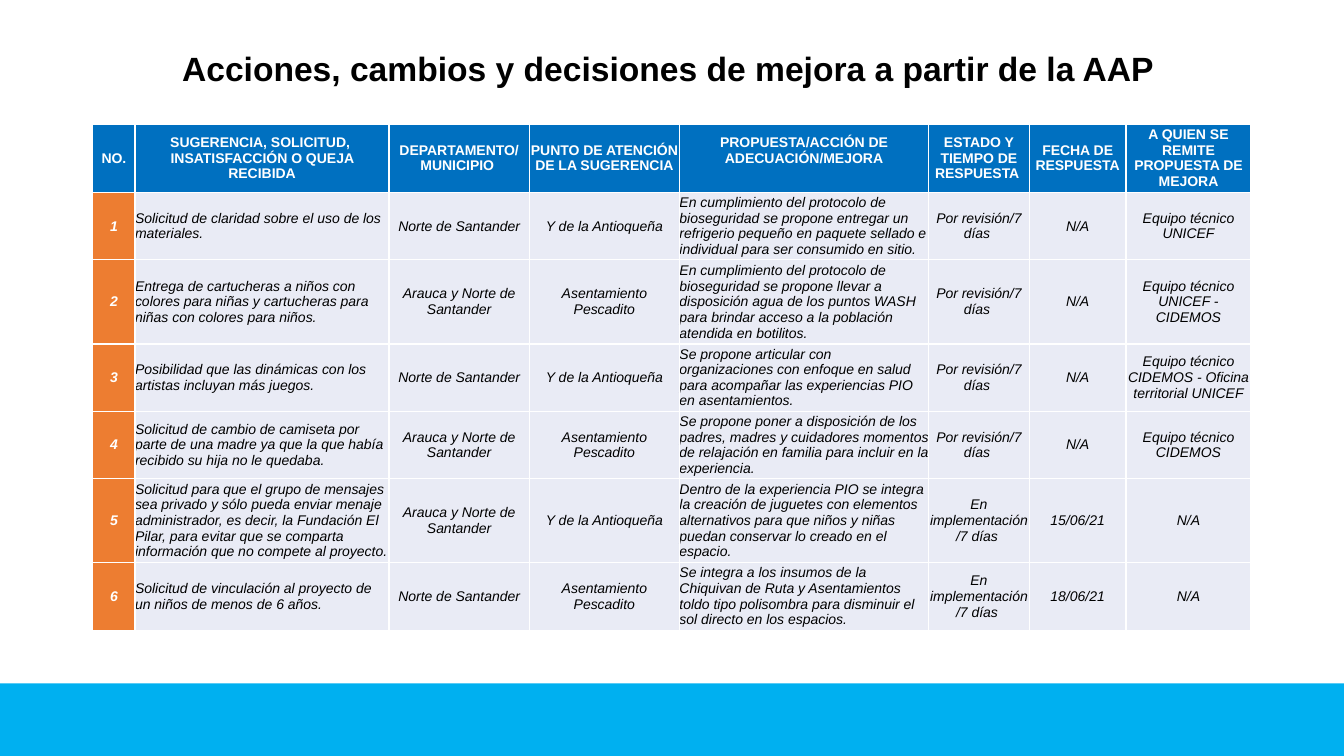
from lxml.etree import SubElement
from pptx import Presentation
from pptx.dml.color import RGBColor
from pptx.enum.shapes import MSO_SHAPE as Shape
from pptx.enum.text import MSO_ANCHOR as Anchor, PP_ALIGN as Align
from pptx.oxml.ns import qn
from pptx.util import Inches, Pt

HEADERS = [
    ["NO."],
    ["SUGERENCIA, SOLICITUD, ", "INSATISFACCIÓN O QUEJA RECIBIDA"],
    ["DEPARTAMENTO/", "MUNICIPIO "],
    ["PUNTO DE ATENCIÓN ", "DE LA SUGERENCIA"],
    ["PROPUESTA/ACCIÓN DE ADECUACIÓN/MEJORA"],
    ["ESTADO Y TIEMPO DE RESPUESTA "],
    ["FECHA DE RESPUESTA"],
    ["A QUIEN SE REMITE PROPUESTA DE MEJORA"],
]
NORTE, ARAUCA = "Norte de Santander", "Arauca y Norte de Santander"
ANTIOQUENA, PESCADITO = "Y de la Antioqueña", "Asentamiento Pescadito"
REVISION, IMPLEMENTACION = "Por revisión/7 días ", "En implementación/7 días "
ACTIONS = [
    ("Solicitud de claridad sobre el uso de los materiales.", NORTE, ANTIOQUENA,
     "En cumplimiento del protocolo de bioseguridad se propone entregar un refrigerio "
     "pequeño en paquete sellado e individual para ser consumido en sitio.",
     REVISION, "N/A", "Equipo técnico UNICEF"),
    ("Entrega de cartucheras a niños con colores para niñas y cartucheras para niñas "
     "con colores para niños.", ARAUCA, PESCADITO,
     "En cumplimiento del protocolo de bioseguridad se propone llevar a disposición agua "
     "de los puntos WASH para brindar acceso a la población atendida en botilitos.",
     REVISION, "N/A", "Equipo técnico UNICEF - CIDEMOS"),
    ("Posibilidad que las dinámicas con los artistas incluyan más juegos.", NORTE, ANTIOQUENA,
     "Se propone articular con organizaciones con enfoque en salud para acompañar las "
     "experiencias PIO en asentamientos.",
     REVISION, "N/A", "Equipo técnico CIDEMOS - Oficina territorial UNICEF"),
    ("Solicitud de cambio de camiseta por parte de una madre ya que la que había recibido "
     "su hija no le quedaba.", ARAUCA, PESCADITO,
     "Se propone poner a disposición de los padres, madres y cuidadores momentos de "
     "relajación en familia para incluir en la experiencia.",
     REVISION, "N/A", "Equipo técnico CIDEMOS"),
    ("Solicitud para que el grupo de mensajes sea privado y sólo pueda enviar menaje "
     "administrador, es decir, la Fundación El Pilar, para evitar que se comparta "
     "información que no compete al proyecto.", ARAUCA, ANTIOQUENA,
     "Dentro de la experiencia PIO se integra la creación de juguetes con elementos "
     "alternativos para que niños y niñas puedan conservar lo creado en el espacio.",
     IMPLEMENTACION, "15/06/21", "N/A"),
    ("Solicitud de vinculación al proyecto de un niños de menos de 6 años.", NORTE, PESCADITO,
     "Se integra a los insumos de la Chiquivan de Ruta y Asentamientos toldo tipo "
     "polisombra para disminuir el sol directo en los espacios.",
     IMPLEMENTACION, "18/06/21", "N/A"),
]
COLUMN_WIDTHS = [3.15, 18.9, 10.43, 11.18, 18.53, 7.5, 7.2, 9.3]
ROW_HEIGHTS = [9.07, 7.87, 9.73, 5.87, 7.87, 9.73, 7.87]
LONG_TEXT_COLUMNS = (1, 4)
PROPOSAL_COLUMN = 4


def color(value):
    return RGBColor.from_string(value)


class SlideBuilder:
    """Draw styled elements on a slide divided into 100 columns and 100 rows."""

    font = "Arial"
    black, white = "000000", "FFFFFF"
    band_blue, header_blue = "00B0F0", "0070C0"
    orange, pale = "ED7D31", "E9EBF5"

    def __init__(self, presentation):
        self.column = presentation.slide_width / 100
        self.row = presentation.slide_height / 100
        self.slide = presentation.slides.add_slide(presentation.slide_layouts[6])

    def place(self, left, top, width, height):
        return (round(left * self.column), round(top * self.row),
                round(width * self.column), round(height * self.row))

    def band(self, *area):
        shape = self.slide.shapes.add_shape(Shape.RECTANGLE, *self.place(*area))
        shape.shadow.inherit = False
        shape.fill.solid()
        shape.fill.fore_color.rgb = color(self.band_blue)
        shape.line.fill.background()

    def add_lines(self, frame, lines, size, ink, align=Align.CENTER, bold=False, italic=False):
        for index, line in enumerate(lines):
            paragraph = frame.add_paragraph() if index else frame.paragraphs[0]
            paragraph.alignment = align
            run = paragraph.add_run()
            run.text = line
            run.font.name, run.font.size = self.font, Pt(size)
            run.font.bold, run.font.italic = bold, italic
            run.font.color.rgb = color(ink)

    def title(self, text, *area):
        frame = self.slide.shapes.add_textbox(*self.place(*area)).text_frame
        frame.word_wrap = True
        frame.vertical_anchor = Anchor.MIDDLE
        self.add_lines(frame, [text], 24, self.black, bold=True)
        frame.paragraphs[0].line_spacing = 0.9

    def cell(self, cell, lines, fill, **style):
        cell.margin_left = cell.margin_right = cell.margin_top = cell.margin_bottom = 0
        cell.vertical_anchor = Anchor.MIDDLE
        properties = cell._tc.get_or_add_tcPr()
        for side in ("a:lnL", "a:lnR", "a:lnT", "a:lnB"):
            border = SubElement(properties, qn(side), w=str(Pt(1)))
            paint = SubElement(border, qn("a:solidFill"))
            SubElement(paint, qn("a:srgbClr"), val=self.white)
        cell.fill.solid()
        cell.fill.fore_color.rgb = color(fill)
        self.add_lines(cell.text_frame, lines, 10, **style)

    def table(self, left, top, headers, records):
        area = self.place(left, top, sum(COLUMN_WIDTHS), sum(ROW_HEIGHTS))
        table = self.slide.shapes.add_table(len(records) + 1, len(headers), *area).table
        table.first_row = table.horz_banding = False
        for column, width in zip(table.columns, COLUMN_WIDTHS):
            column.width = round(width * self.column)
        for row, height in zip(table.rows, ROW_HEIGHTS):
            row.height = round(height * self.row)
        for index, lines in enumerate(headers):
            self.cell(table.cell(0, index), lines, self.header_blue, ink=self.white, bold=True)
        table.cell(0, PROPOSAL_COLUMN).margin_bottom = Inches(0.15)
        for number, record in enumerate(records, 1):
            self.cell(table.cell(number, 0), [str(number)], self.orange,
                      ink=self.white, bold=True, italic=True)
            for index, text in enumerate(record, 1):
                align = Align.LEFT if index in LONG_TEXT_COLUMNS else Align.CENTER
                self.cell(table.cell(number, index), [text], self.pale,
                          ink=self.black, align=align, italic=True)


def main():
    presentation = Presentation()
    presentation.slide_width, presentation.slide_height = Inches(13.33), Inches(7.5)
    builder = SlideBuilder(presentation)
    builder.band(0, 90.4, 100, 9.6)
    builder.title("Acciones, cambios y decisiones de mejora a partir de la AAP ",
                  6.9, 5.33, 86.25, 8)
    builder.table(6.9, 16.4, HEADERS, ACTIONS)
    presentation.save("out.pptx")


if __name__ == "__main__":
    main()
